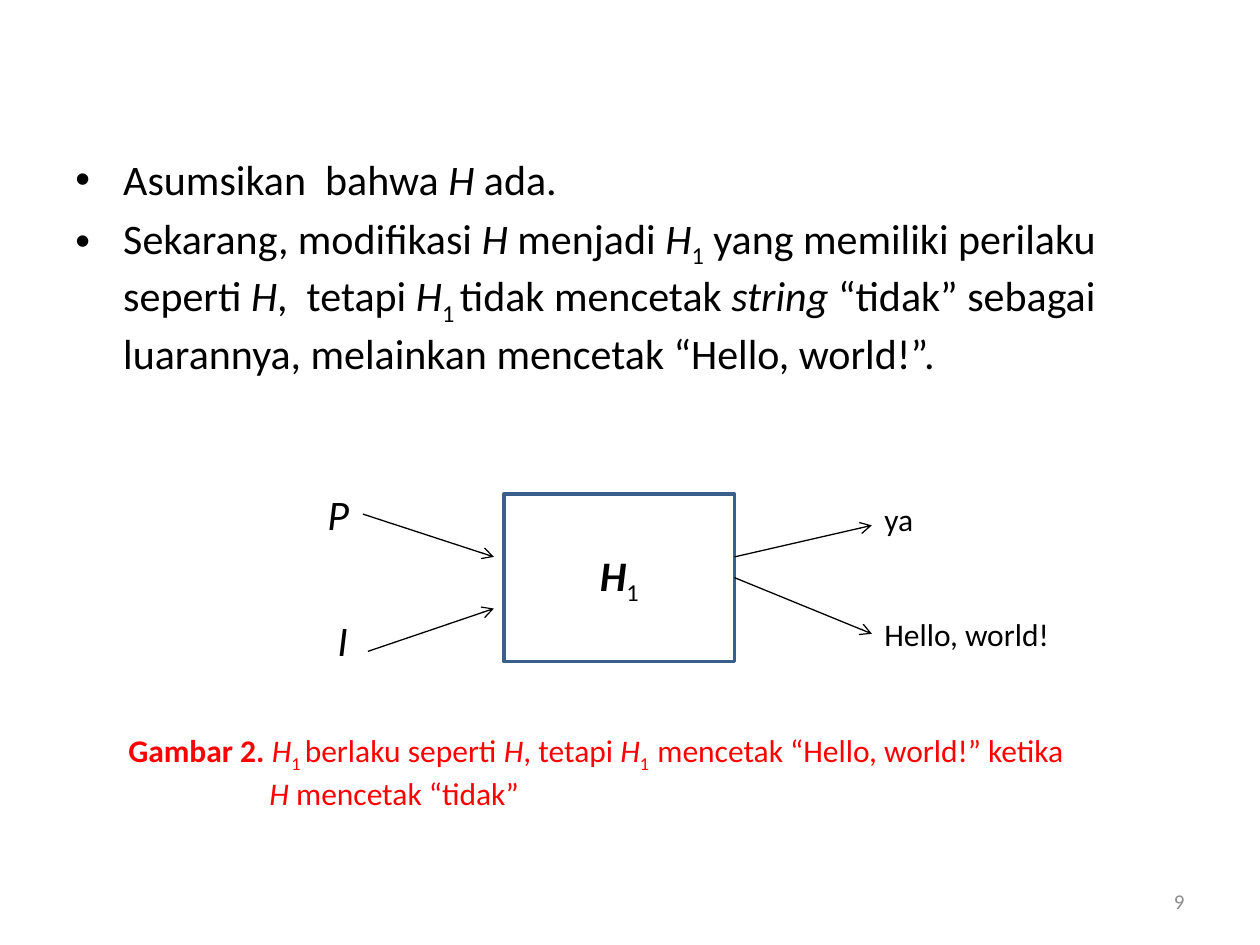
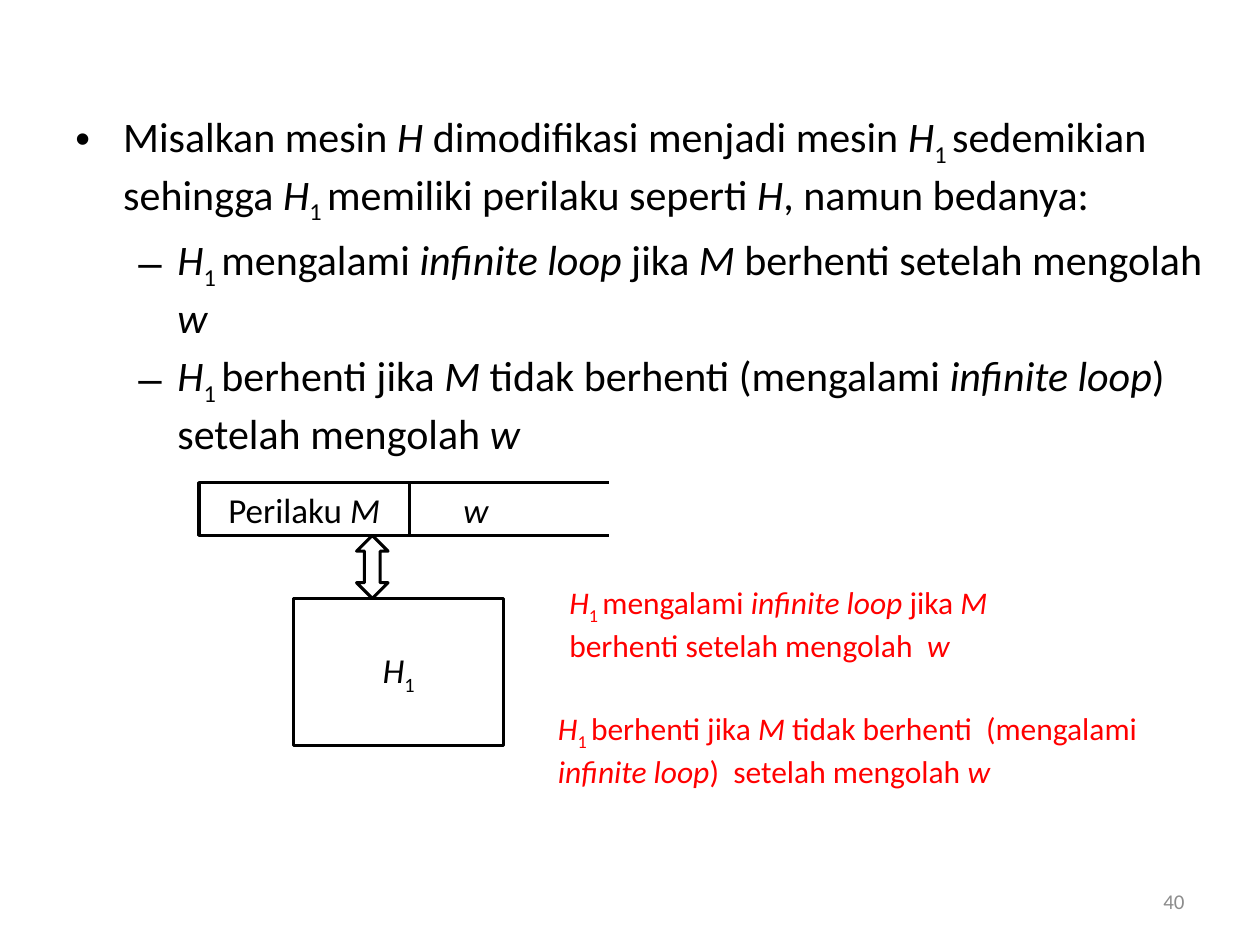
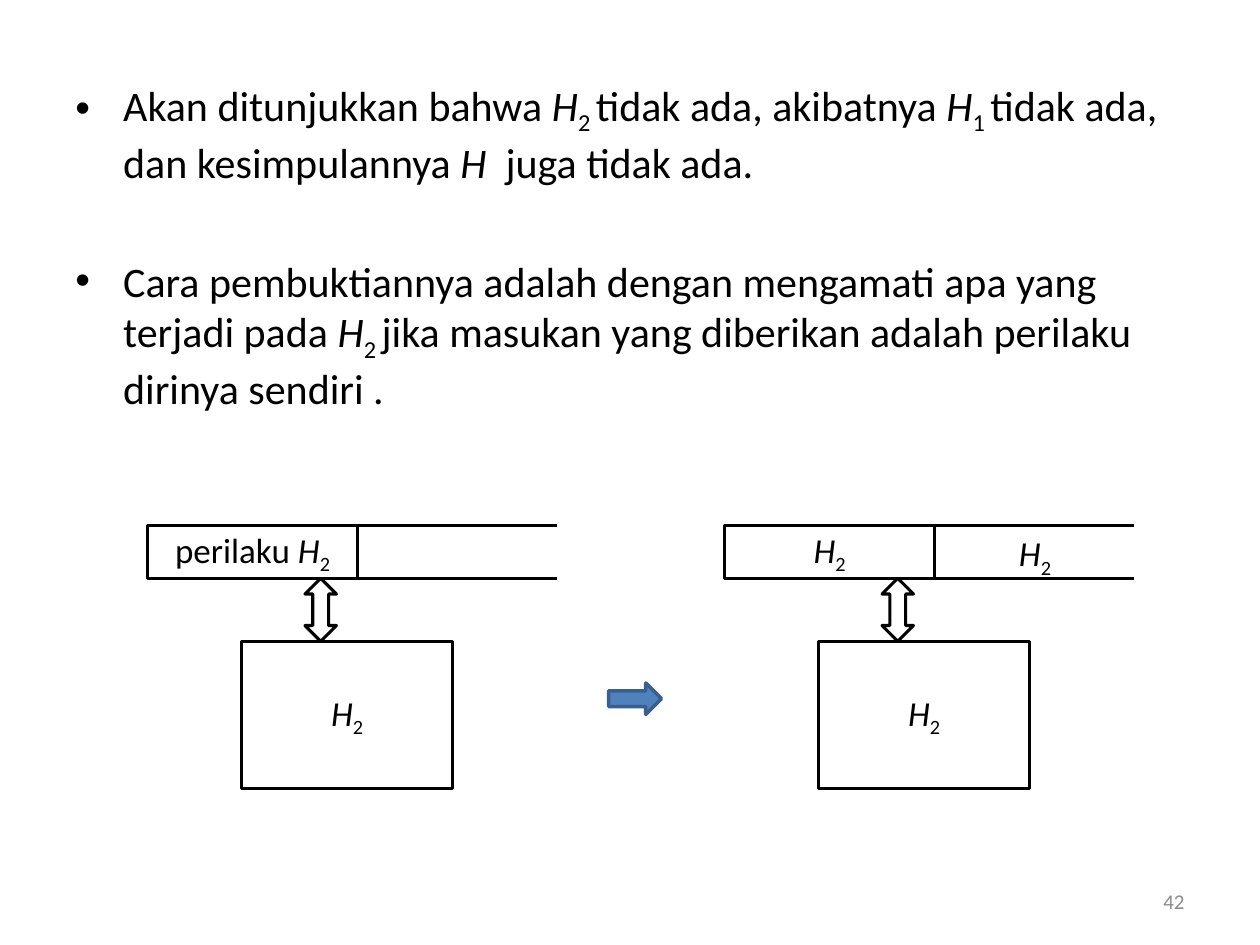
from lxml import etree
from pptx import Presentation
from pptx.dml.color import RGBColor
from pptx.enum.shapes import MSO_CONNECTOR, MSO_SHAPE
from pptx.enum.text import MSO_ANCHOR, PP_ALIGN
from pptx.oxml.ns import qn
from pptx.util import Pt

PX = 9144
FONT = "Calibri"
BLACK = RGBColor(0, 0, 0)
RED = RGBColor(255, 0, 0)
GRAY = RGBColor(0x8C, 0x8C, 0x8C)
BLUE = RGBColor(0x4F, 0x81, 0xBD)
DARK_BLUE = RGBColor(0x3A, 0x5F, 0x8C)
LEFT, CENTER, RIGHT = PP_ALIGN.LEFT, PP_ALIGN.CENTER, PP_ALIGN.RIGHT
TOP, MIDDLE = MSO_ANCHOR.TOP, MSO_ANCHOR.MIDDLE
RECTANGLE = MSO_SHAPE.RECTANGLE
UP_DOWN_ARROW = MSO_SHAPE.UP_DOWN_ARROW
RIGHT_ARROW = MSO_SHAPE.RIGHT_ARROW
STRAIGHT = MSO_CONNECTOR.STRAIGHT
BULLET_INDENTS = {"•": (38, -38), "–": (81, -31)}
ITALIC, BOLD, SUBSCRIPT = "*", "^", "_"


def add_box(page, place, text="", kind=None, size=24, color=BLACK, align=LEFT,
            anchor=TOP, wrap=True, gap=0, later_indent=0,
            fill=None, line=BLACK, line_width=1.75):
    place = [value * PX for value in place]
    if kind is None:
        box = page.shapes.add_textbox(*place)
    else:
        box = page.shapes.add_shape(kind, *place)
        box.shadow.inherit = False
        box.line.color.rgb = line
        box.line.width = Pt(line_width)
        if fill is None:
            box.fill.background()
        else:
            box.fill.solid()
            box.fill.fore_color.rgb = fill
    frame = box.text_frame
    frame.word_wrap = wrap
    frame.vertical_anchor = anchor
    for index, content in enumerate(text.split("\n")):
        para = frame.add_paragraph() if index else frame.paragraphs[0]
        para.alignment = align
        properties = para._p.get_or_add_pPr()
        if content[:1] in BULLET_INDENTS:
            margin, indent = BULLET_INDENTS[content[0]]
            properties.set("marL", str(margin * PX))
            properties.set("indent", str(indent * PX))
            etree.SubElement(properties, qn("a:buFont"), typeface="Arial")
            etree.SubElement(properties, qn("a:buChar"), char=content[0])
            content = content[1:]
        elif index and later_indent:
            properties.set("marL", str(later_indent * PX))
        if index:
            para.space_before = Pt(gap)
        active = set()
        for mark in (ITALIC, BOLD, SUBSCRIPT):
            content = content.replace(mark, f"\0{mark}\0")
        for piece in content.split("\0"):
            if piece in (ITALIC, BOLD, SUBSCRIPT):
                active ^= {piece}
            elif piece:
                span = para.add_run()
                span.text = piece
                span.font.name = FONT
                span.font.size = Pt(size)
                span.font.color.rgb = color
                span.font.italic = ITALIC in active
                span.font.bold = BOLD in active
                if SUBSCRIPT in active:
                    span._r.get_or_add_rPr().set("baseline", "-25000")
    return box


def add_line(page, start, end, width=0.75, arrow=False):
    points = [value * PX for value in (*start, *end)]
    line = page.shapes.add_connector(STRAIGHT, *points)
    line.line.color.rgb = BLACK
    line.line.width = Pt(width)
    if arrow:
        etree.SubElement(line.line._get_or_add_ln(), qn("a:tailEnd"), type="arrow")
    etree.SubElement(line._element.spPr, qn("a:effectLst"))
    return line


deck = Presentation()
deck.slide_width = 1000 * PX
deck.slide_height = 750 * PX
blank = deck.slide_layouts[6]

bodies = [
    ("9", (50, 117, 900, 553), 4.8,
     "•Asumsikan  bahwa *H *ada.\n"
     "•Sekarang, modifikasi *H *menjadi *H*_1_ yang memiliki perilaku seperti *H*,  "
     "tetapi *H*_1 _tidak mencetak *string* “tidak” sebagai luarannya, "
     "melainkan mencetak “Hello, world!”."),
    ("40", (50, 83, 917, 608), 4.8,
     "•Misalkan mesin *H *dimodifikasi menjadi mesin *H*_1 _sedemikian sehingga "
     "*H*_1 _memiliki perilaku seperti *H*, namun bedanya:\n"
     "–*H*_1 _mengalami *infinite loop *jika *M *berhenti setelah mengolah *w*\n"
     "–*H*_1 _berhenti jika *M *tidak berhenti (mengalami *infinite loop*) "
     "setelah mengolah *w*"),
    ("42", (50, 58, 900, 612), 38.9,
     "•Akan ditunjukkan bahwa *H*_2 _tidak ada, akibatnya *H*_1 _tidak ada, "
     "dan kesimpulannya *H  *juga tidak ada.\n"
     "•Cara pembuktiannya adalah dengan mengamati apa yang terjadi pada *H*_2 _jika "
     "masukan yang diberikan adalah perilaku dirinya sendiri ."),
]
pages = []
for number, place, gap, text in bodies:
    page = deck.slides.add_slide(blank)
    add_box(page, place, text, gap=gap)
    add_box(page, (717, 695, 233, 40), number, size=12, color=GRAY,
            align=RIGHT, anchor=MIDDLE)
    pages.append(page)
modified_page, behaviour_page, proof_page = pages

machine = add_box(modified_page, (400, 392, 183, 133), "^*H*^_1_", kind=RECTANGLE,
                  align=CENTER, anchor=MIDDLE, line=DARK_BLUE, line_width=2)
program = add_box(modified_page, (250, 383, 38, 50), "*P*", wrap=False)
add_box(modified_page, (258, 483, 29, 50), "*I*", wrap=False)
add_box(modified_page, (692, 392, 43, 40), "ya", size=18, wrap=False)
hello = add_box(modified_page, (692, 483, 152, 40), "Hello, world!", size=18, wrap=False)
program_arrow = add_line(modified_page, (288, 409), (392, 442), arrow=True)
program_arrow.begin_connect(program, 3)
add_line(modified_page, (292, 517), (392, 483), arrow=True)
add_line(modified_page, (583, 442), (692, 417), arrow=True)
hello_arrow = add_line(modified_page, (583, 458), (692, 504), arrow=True)
hello_arrow.begin_connect(machine, 3)
hello_arrow.end_connect(hello, 1)
add_box(modified_page, (92, 575, 794, 71),
        "^Gambar 2. ^*H*_1 _berlaku seperti *H*, tetapi *H*_1  _mencetak "
        "“Hello, world!” ketika\n*H *mencetak “tidak”",
        size=18, color=RED, wrap=False, later_indent=112)

tapes = [
    (behaviour_page, 158, 383, "Perilaku* M*", "*w*", LEFT, "*H*_1_"),
    (proof_page, 117, 417, "perilaku* H*_2_", "", CENTER, "*H*_2_"),
    (proof_page, 575, 417, "*H*_2_", "*H*_2_", CENTER, "*H*_2_"),
]
for page, x, y, cell, next_cell, align, name in tapes:
    add_box(page, (x, y, 167, 42), cell, kind=RECTANGLE, size=20,
            align=CENTER, anchor=MIDDLE)
    add_line(page, (x + 142, y + 42), (x + 325, y + 42), width=1.75)
    add_line(page, (x + 159, y), (x + 325, y), width=1.75)
    add_line(page, (x + 167, y), (x + 167, y + 42))
    if next_cell:
        add_box(page, (x + 200, y, 93, 44), next_cell, size=20, align=align)
    add_box(page, (x + 75, y + 92, 167, 117), name, kind=RECTANGLE, size=20,
            align=CENTER, anchor=MIDDLE)
    add_box(page, (x + 125, y + 42, 25, 50), kind=UP_DOWN_ARROW)

add_box(behaviour_page, (442, 458, 359, 71),
        "*H*_1 _mengalami *infinite loop *jika *M*\nberhenti setelah mengolah  *w*",
        size=18, color=RED, wrap=False)
add_box(behaviour_page, (433, 558, 492, 71),
        "*H*_1 _berhenti jika *M *tidak berhenti  (mengalami *infinite loop*)  "
        "setelah mengolah *w*", size=18, color=RED)
add_box(proof_page, (483, 542, 42, 25), kind=RIGHT_ARROW,
        fill=BLUE, line=DARK_BLUE, line_width=2)

deck.save("out.pptx")
